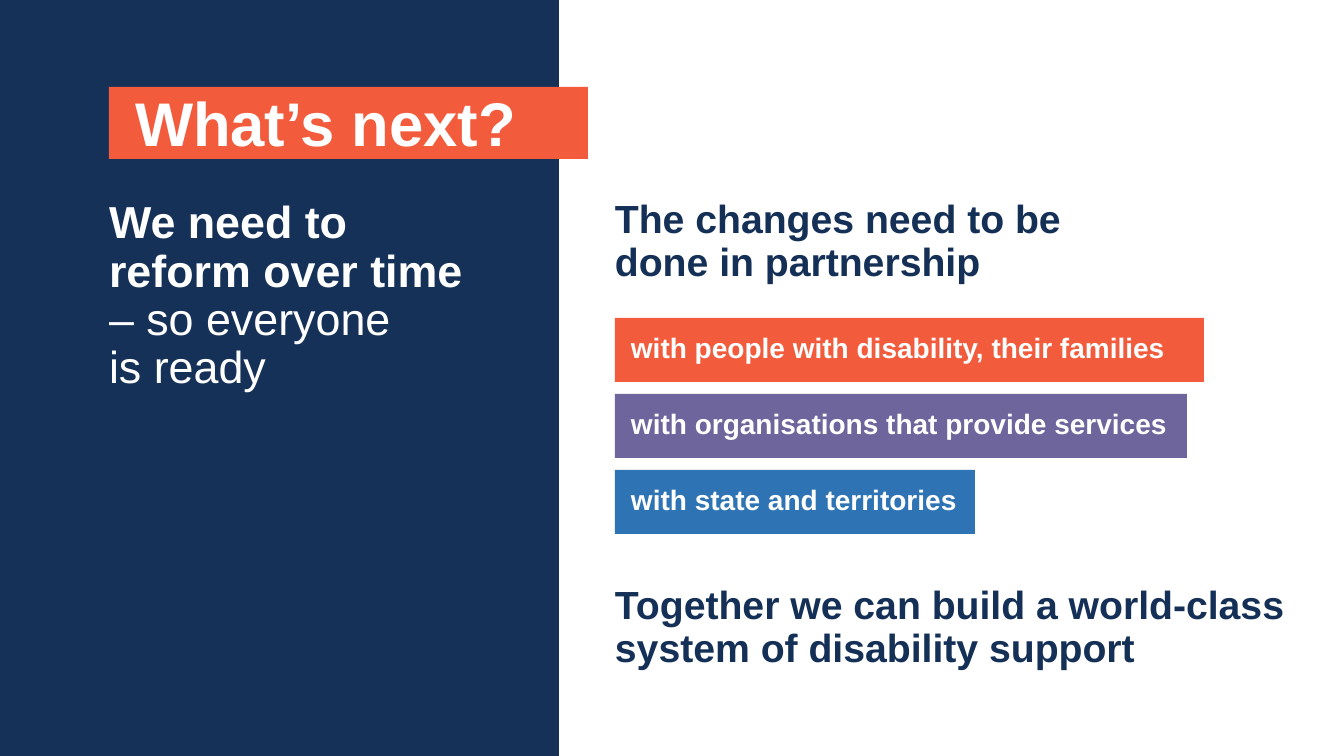
"""Build the "What's next?" slide on disability reform."""
from pptx import Presentation
from pptx.dml.color import RGBColor
from pptx.enum.shapes import MSO_SHAPE
from pptx.enum.text import MSO_ANCHOR, PP_ALIGN

RECT = MSO_SHAPE.RECTANGLE
TOP, MIDDLE = MSO_ANCHOR.TOP, MSO_ANCHOR.MIDDLE
LEFT = PP_ALIGN.LEFT
PX = 914400 / 100.8
PT = 12700
THEME = {
    "font": "Arial",
    "navy": RGBColor.from_string("153157"),
    "ink": RGBColor.from_string("153057"),
    "coral": RGBColor.from_string("F25C3C"),
    "purple": RGBColor.from_string("6D659B"),
    "blue": RGBColor.from_string("2E74B5"),
    "white": RGBColor.from_string("FFFFFF"),
    "title": 44 * PT,
    "lead": 32 * PT,
    "head": 28 * PT,
    "label": 20 * PT,
}

deck = Presentation()
deck.slide_width, deck.slide_height = round(1344 * PX), round(756 * PX)
slide = deck.slides.add_slide(deck.slide_layouts[6])
shapes = slide.shapes


def add_bar(x, y, w, h, fill):
    bar = shapes.add_shape(RECT, *(round(n * PX) for n in (x, y, w, h)))
    bar.shadow.inherit = False
    bar.fill.solid()
    bar.fill.fore_color.rgb = THEME[fill]
    bar.line.fill.background()
    return bar


def write(shape, lines, size, color, inset=0, anchor=TOP):
    frame = shape.text_frame
    frame.word_wrap = True
    frame.vertical_anchor = anchor
    frame.margin_left = frame.margin_right = round(inset * PX)
    frame.margin_top = frame.margin_bottom = round(inset * PX)
    para = frame.paragraphs[0]
    para.alignment = LEFT
    para.line_spacing = 0.9
    for i, (text, bold) in enumerate(lines):
        if i:
            para.add_line_break()
        run = para.add_run()
        run.text = text
        run.font.name = THEME["font"]
        run.font.size = THEME[size]
        run.font.bold = bold
        run.font.color.rgb = THEME[color]


add_bar(0, 0, 559, 756, "navy")
add_bar(109, 87, 479, 72, "coral")

texts = [
    ((125, 53, 1159, 146), [("What’s next?", True)], "title", "white", 10, MIDDLE),
    ((109, 200, 370, 469),
     [("We need to reform over time", True), ("– so everyone", False), ("is ready", False)],
     "lead", "white", 0, TOP),
    ((615, 200, 499, 130), [("The changes need to be done in partnership", True)],
     "head", "ink", 0, TOP),
    ((615, 586, 729, 130),
     [("Together we can build a world-class system of disability support", True)],
     "head", "ink", 0, TOP),
]
for place, lines, size, color, inset, anchor in texts:
    box = shapes.add_textbox(*(round(n * PX) for n in place))
    write(box, lines, size, color, inset, anchor)

partners = [
    ("with people with disability, their families", 589, "coral"),
    ("with organisations that provide services", 572, "purple"),
    ("with state and territories", 360, "blue"),
]
for i, (text, width, fill) in enumerate(partners):
    bar = add_bar(615, 318 + 76 * i, width, 64, fill)
    write(bar, [(text, True)], "label", "white", 16)

deck.save("out.pptx")
